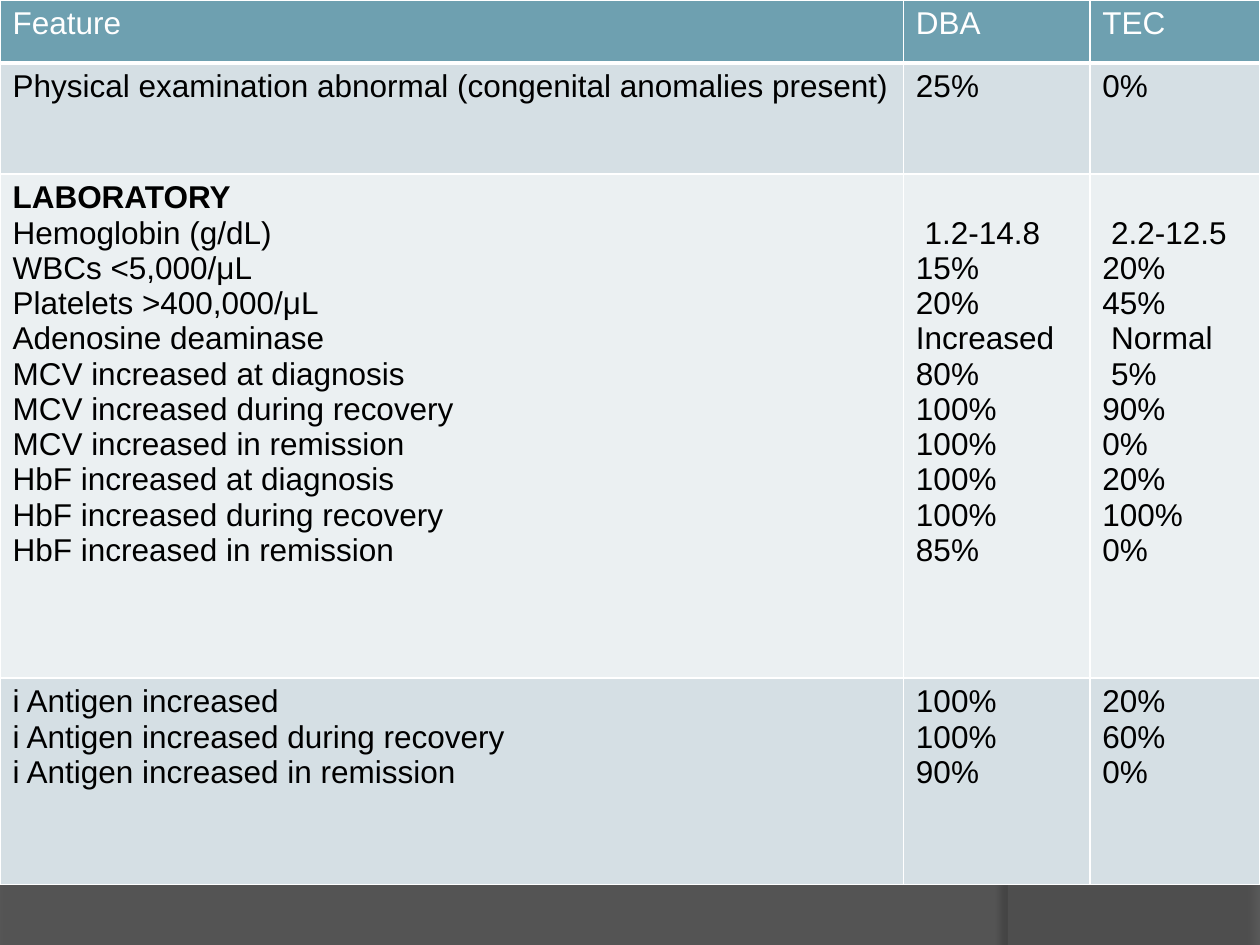
from lxml import etree
from pptx import Presentation
from pptx.dml.color import RGBColor
from pptx.oxml import ns
from pptx.util import Inches, Pt

LABS = [
    ("Hemoglobin (g/dL)", " 1.2-14.8", " 2.2-12.5"),
    ("WBCs <5,000/μL", "15%", "20%"),
    ("Platelets >400,000/μL", "20%", "45%"),
    ("Adenosine deaminase", "Increased", " Normal"),
    ("MCV increased at diagnosis", "80%", " 5%"),
    ("MCV increased during recovery", "100%", "90%"),
    ("MCV increased in remission", "100%", "0%"),
    ("HbF increased at diagnosis", "100%", "20%"),
    ("HbF increased during recovery", "100%", "100%"),
    ("HbF increased in remission", "85%", "0%"),
]
ANTIGENS = [
    ("i Antigen increased", "100%", "20%"),
    ("i Antigen increased during recovery", "100%", "60%"),
    ("i Antigen increased in remission", "90%", "0%"),
]
EXAM = [("Physical examination abnormal (congenital anomalies present)", "25%", "0%")]
HEAD = [("Feature", "DBA", "TEC")]
# lines, row height, fill, text colour
ROWS = [
    (HEAD, 0.5, "6EA0B0", "FFFFFF"),
    (EXAM, 0.88, "D5DFE4", "000000"),
    (LABS, 4, "EBF0F2", "000000"),
    (ANTIGENS, 1.64, "D5DFE4", "000000"),
]
WIDTHS = [7.17, 1.48, 1.35]
LINE = 0.28


def paint(fill, color):
    fill.solid()
    fill.fore_color.rgb = RGBColor.from_string(color)


def add(parent, tag, **attrs):
    node = etree.SubElement(parent, ns.qn(tag))
    for key, value in attrs.items():
        node.set(key, str(value))
    return node


def curve(*ends, steps=40):
    """Points along a cubic Bezier curve given by its four control points."""
    spots = []
    for i in range(steps + 1):
        t = i / steps
        parts = ((1 - t) ** 3, 3 * t * (1 - t) ** 2, 3 * t * t * (1 - t), t ** 3)
        spots.append(tuple(sum(w * p[axis] for w, p in zip(parts, ends)) for axis in (0, 1)))
    return spots


def swoosh(slide, spots, color, alpha, shade, dist, angle):
    """Translucent backdrop shape with a soft shadow; alphas are in percent."""
    pen = slide.shapes.build_freeform(*spots[0], scale=Inches(1))
    pen.add_line_segments(spots[1:], close=True)
    shape = pen.convert_to_shape()
    paint(shape.fill, color)
    shape.line.fill.background()
    props = shape.fill._xPr
    add(props.find(".//" + ns.qn("a:solidFill")).find(ns.qn("a:srgbClr")),
        "a:alpha", val=alpha * 1000)
    glow = add(add(props, "a:effectLst"), "a:outerShdw", blurRad=Pt(4),
               dist=Pt(dist), dir=angle * 60000, algn="ctr", rotWithShape=0)
    add(add(glow, "a:srgbClr", val="000000"), "a:alpha", val=shade * 1000)


def edge(cell, base):
    """White cell borders, with the bottom one base points wide."""
    props = cell._tc.get_or_add_tcPr()
    for i, (side, size) in enumerate(zip("LRTB", (1, 1, 1, base))):
        line = add(props, f"a:ln{side}", w=Pt(size))
        add(add(line, "a:solidFill"), "a:srgbClr", val="FFFFFF")
        props.insert(i, line)


def write(cell, lines, color):
    cell.text_frame.text = "\n".join(lines)
    for para in cell.text_frame.paragraphs:
        for run in para.runs:
            run.font.name = "Arial"
            run.font.size = Pt(18)
            run.font.bold = run.text == "LABORATORY"
            run.font.color.rgb = RGBColor.from_string(color)


def compare(slide):
    """Table that sets the features of DBA against those of TEC."""
    high = sum(row[1] for row in ROWS)
    table = slide.shapes.add_table(len(ROWS), len(WIDTHS), 0, 0,
                                   Inches(10), Inches(high)).table
    for col, width in zip(table.columns, WIDTHS):
        col.width = Inches(width)
    for r, (lines, height, fill, color) in enumerate(ROWS):
        table.rows[r].height = Inches(height)
        for c, words in enumerate(zip(*lines)):
            cell = table.cell(r, c)
            if lines is LABS and c == 0:
                words = ("LABORATORY", *words)
            elif lines is LABS:
                cell.margin_top = Inches(0.05 + LINE)
            write(cell, words, color)
            paint(cell.fill, fill)
            edge(cell, 3 if r == 0 else 1)


def main():
    deck = Presentation()
    deck.slide_width, deck.slide_height = Inches(10), Inches(7.5)
    slide = deck.slides.add_slide(deck.slide_layouts[6])
    paint(slide.background.fill, "3B3B3B")
    wave = [(0, 7.51), (10, 7.51)] + curve((10, 5.2), (5.59, 7.29), (3.91, 7.19), (0, 7.05))
    swoosh(slide, wave, "7F7F7F", 45, 35, 3.5, 270)
    side = [(10, 0.02), (10, 7.5)] + curve((8.21, 7.5), (9.35, 6.19), (10.18, 3), (8, 0))
    swoosh(slide, side, "5E5E5E", 40, 45, 4, 180)
    compare(slide)
    deck.save("out.pptx")


if __name__ == "__main__":
    main()
